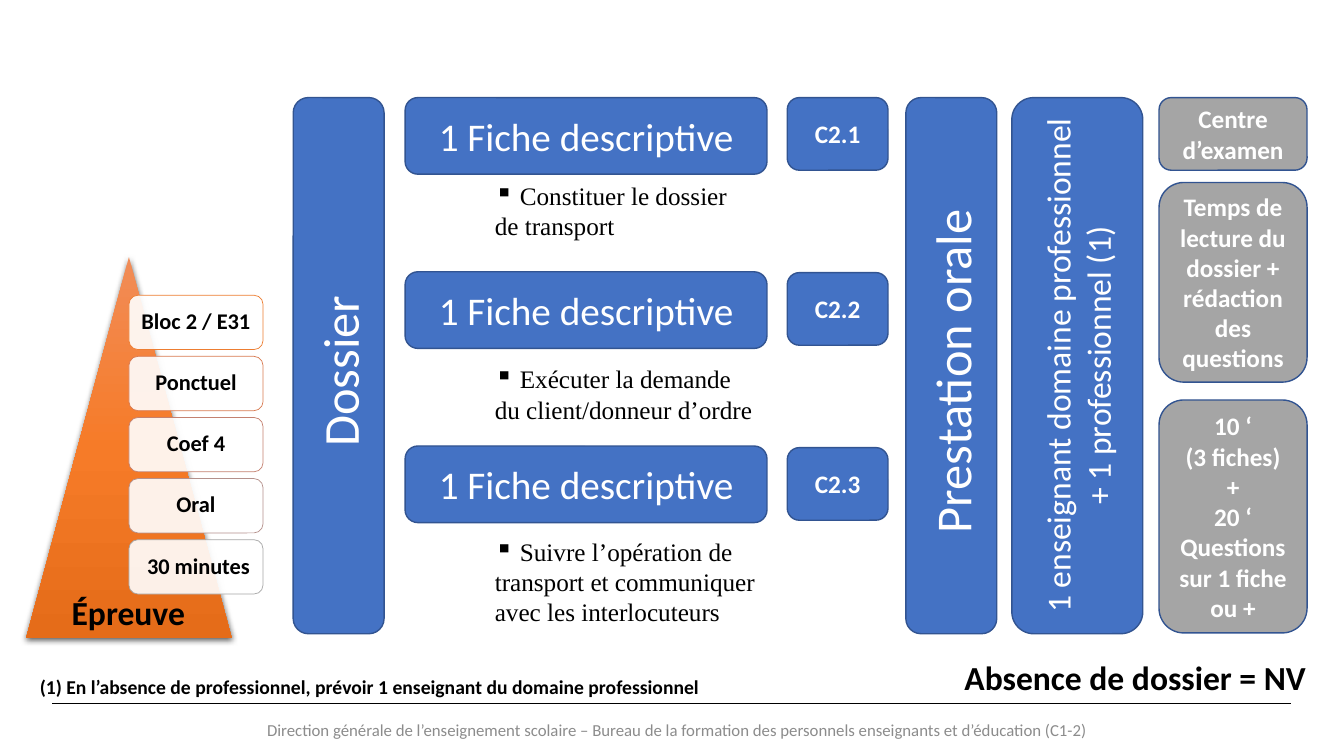
from dataclasses import dataclass

from lxml import etree
from pptx import Presentation
from pptx.dml.color import RGBColor
from pptx.enum.shapes import MSO_CONNECTOR, MSO_SHAPE
from pptx.enum.text import MSO_ANCHOR, MSO_AUTO_SIZE, PP_ALIGN
from pptx.oxml import parse_xml
from pptx.oxml.ns import qn
from pptx.shapes.autoshape import Shape
from pptx.shapes.shapetree import SlideShapes
from pptx.util import Cm, Pt

ROUNDED, TRIANGLE = MSO_SHAPE.ROUNDED_RECTANGLE, MSO_SHAPE.ISOSCELES_TRIANGLE
STRAIGHT = MSO_CONNECTOR.STRAIGHT
LEFT, CENTER = PP_ALIGN.LEFT, PP_ALIGN.CENTER
TOP, MIDDLE = MSO_ANCHOR.TOP, MSO_ANCHOR.MIDDLE
FIT_TEXT = MSO_AUTO_SIZE.SHAPE_TO_FIT_TEXT
DRAWING_NS = "http://schemas.openxmlformats.org/drawingml/2006/main"


@dataclass(frozen=True)
class Theme:
    sans: str = "Calibri"
    serif: str = "Times New Roman"
    blue: str = "4472C4"
    outline: str = "325491"
    grey: str = "A5A5A5"
    white: str = "FFFFFF"
    black: str = "000000"
    footer: str = "8C8C8C"
    gradient: tuple[str, ...] = ("F18C57", "F67B28", "E56C19")
    pillar_size: int = 36
    sheet_size: int = 28
    title_size: int = 24
    body_size: int = 18
    card_size: int = 16
    note_size: int = 14
    footer_size: int = 12


THEME = Theme()


@dataclass(frozen=True)
class Box:
    """Position and size in centimetres."""
    left: float
    top: float
    width: float
    height: float

    def lengths(self) -> tuple[Cm, Cm, Cm, Cm]:
        return Cm(self.left), Cm(self.top), Cm(self.width), Cm(self.height)


@dataclass(frozen=True)
class Panel:
    text: str
    box: Box
    size: int
    fill: str = THEME.blue
    bold: bool = False
    vertical: bool = False


@dataclass(frozen=True)
class Skill:
    code: str
    task: str
    task_top: float
    task_height: float


@dataclass(frozen=True)
class Card:
    text: str
    outline: str


PILLAR_TOP, PILLAR_HEIGHT = 2.46, 13.51
SHEET_PITCH, CODE_PITCH = 4.39, 4.41
CARD_TOP, CARD_PITCH = 7.44, 1.54
CONDITION_LEFT, CONDITION_WIDTH = 29.21, 3.73

PILLARS = [
    Panel("Dossier ", Box(7.39, PILLAR_TOP, 2.29, PILLAR_HEIGHT),
          THEME.pillar_size, vertical=True),
    Panel("Prestation orale ", Box(22.83, PILLAR_TOP, 2.29, PILLAR_HEIGHT),
          THEME.pillar_size, vertical=True),
    Panel("1 enseignant domaine professionnel + 1 professionnel (1)",
          Box(25.5, PILLAR_TOP, 3.3, PILLAR_HEIGHT), THEME.title_size, vertical=True),
]
CONDITIONS = [
    Panel(text, Box(CONDITION_LEFT, top, CONDITION_WIDTH, height),
          THEME.body_size, THEME.grey, bold=True)
    for text, top, height in (
        ("Centre d’examen", PILLAR_TOP, 1.83),
        ("Temps de lecture du dossier + rédaction des questions", 4.6, 5.03),
        ("10 ‘\v (3 fiches) \n+\n20 ‘\nQuestions sur 1 fiche ou +", 10.08, 5.87),
    )
]
SKILLS = [
    Skill("C2.1", " Constituer le dossier de transport", 4.42, 1.8),
    Skill("C2.2", " Exécuter la demande du client/donneur d’ordre", 9.04, 1.8),
    Skill("C2.3", " Suivre l’opération de transport et communiquer avec les interlocuteurs",
          13.39, 2.57),
]
CARDS = [
    Card("Bloc 2 / E31", "ED7D31"),
    Card("Ponctuel", "D87A51"),
    Card("Coef 4", "C48170"),
    Card("Oral", "B4908B"),
    Card(" 30 minutes", "A5A5A5"),
]


def write_text(shape: Shape, text: str, *, size: int, color: str = THEME.black,
               font: str = THEME.sans, bold: bool = False, align: PP_ALIGN = CENTER,
               anchor: MSO_ANCHOR = MIDDLE, bullet: str = "", spacing: float = 1.0,
               vertical: bool = False) -> None:
    frame = shape.text_frame
    frame.word_wrap = True
    frame.vertical_anchor = anchor
    if vertical:
        frame._txBody.bodyPr.set("vert", "vert270")
    for index, line in enumerate(text.split("\n")):
        paragraph = frame.add_paragraph() if index else frame.paragraphs[0]
        paragraph.text = line
        paragraph.alignment = align
        paragraph.line_spacing = spacing
        if bullet:
            properties = paragraph._p.get_or_add_pPr()
            etree.SubElement(properties, qn("a:buChar")).set("char", bullet)
        for run in paragraph.runs:
            run.font.name = font
            run.font.size = Pt(size)
            run.font.bold = bold
            run.font.color.rgb = RGBColor.from_string(color)


def add_label(shapes: SlideShapes, box: Box, text: str, *, anchor: MSO_ANCHOR = TOP,
              **text_format) -> None:
    label = shapes.add_textbox(*box.lengths())
    if anchor == TOP:
        label.text_frame.auto_size = FIT_TEXT
    write_text(label, text, anchor=anchor, **text_format)


def add_rounded(shapes: SlideShapes, box: Box, fill: str, outline: str,
                line_width: float) -> Shape:
    rounded = shapes.add_shape(ROUNDED, *box.lengths())
    rounded.shadow.inherit = False
    rounded.fill.solid()
    rounded.fill.fore_color.rgb = RGBColor.from_string(fill)
    rounded.line.color.rgb = RGBColor.from_string(outline)
    rounded.line.width = Pt(line_width)
    return rounded


def add_panel(shapes: SlideShapes, panel: Panel) -> None:
    rounded = add_rounded(shapes, panel.box, panel.fill, THEME.outline, 1)
    write_text(rounded, panel.text, size=panel.size, color=THEME.white,
               bold=panel.bold, vertical=panel.vertical)


def add_card(shapes: SlideShapes, card: Card, top: float) -> None:
    rounded = add_rounded(shapes, Box(3.25, top, 3.38, 1.37), THEME.white, card.outline, 0.5)
    fill_color = rounded._element.spPr.find(qn("a:solidFill"))[0]
    etree.SubElement(fill_color, qn("a:alpha")).set("val", "90000")
    write_text(rounded, card.text, size=THEME.card_size, bold=True, spacing=0.9)


def add_pyramid(shapes: SlideShapes, box: Box) -> None:
    pyramid = shapes.add_shape(TRIANGLE, *box.lengths())
    pyramid.shadow.inherit = False
    pyramid.line.fill.background()
    pyramid.fill.background()
    stops = "".join(f'<a:gs pos="{index * 50000}"><a:srgbClr val="{color}"/></a:gs>'
                    for index, color in enumerate(THEME.gradient))
    properties = pyramid._element.spPr
    properties.replace(properties.find(qn("a:noFill")), parse_xml(
        f'<a:gradFill xmlns:a="{DRAWING_NS}"><a:gsLst>{stops}</a:gsLst>'
        '<a:lin ang="5400000" scaled="0"/></a:gradFill>'))
    properties.find(qn("a:effectLst")).append(parse_xml(
        f'<a:outerShdw xmlns:a="{DRAWING_NS}" blurRad="57150" dist="19050" dir="5400000">'
        f'<a:srgbClr val="{THEME.black}"><a:alpha val="63000"/></a:srgbClr></a:outerShdw>'))


def add_footer(shapes: SlideShapes) -> None:
    rule = shapes.add_connector(STRAIGHT, Cm(1.32), Cm(17.73), Cm(32.54), Cm(17.73))
    rule.line.color.rgb = RGBColor.from_string(THEME.black)
    rule.line.width = Pt(0.8)
    etree.SubElement(rule._element.spPr, qn("a:effectLst"))
    add_label(shapes, Box(1.32, 17.73, 31.6, 1.32),
              "Direction générale de l’enseignement scolaire – Bureau de la formation "
              "des personnels enseignants et d’éducation (C1-2) ",
              size=THEME.footer_size, color=THEME.footer, anchor=MIDDLE)


def main() -> None:
    deck = Presentation()
    deck.slide_width, deck.slide_height = Cm(33.87), Cm(19.05)
    shapes = deck.slides.add_slide(deck.slide_layouts[6]).shapes

    add_footer(shapes)

    # Vertical pillars and exam conditions
    for panel in PILLARS + CONDITIONS:
        add_panel(shapes, panel)

    # One descriptive sheet per skill
    for row, skill in enumerate(SKILLS):
        add_panel(shapes, Panel("1 Fiche descriptive",
                                Box(10.21, PILLAR_TOP + row * SHEET_PITCH, 9.12, 1.93),
                                THEME.sheet_size))
        add_panel(shapes, Panel(skill.code,
                                Box(19.84, PILLAR_TOP + row * CODE_PITCH, 2.54, 1.83),
                                THEME.body_size, bold=True))
        add_label(shapes, Box(12.22, skill.task_top, 7.11, skill.task_height), skill.task,
                  size=THEME.body_size, font=THEME.serif, align=LEFT, bullet="▪")

    # Exam pyramid with its cards
    add_pyramid(shapes, Box(0.66, 6.48, 5.18, 9.6))
    for row, card in enumerate(CARDS):
        add_card(shapes, card, CARD_TOP + row * CARD_PITCH)
    add_label(shapes, Box(0.86, 14.78, 4.75, 1.27), "Épreuve",
              size=THEME.title_size, bold=True)

    # Closing notes
    add_label(shapes, Box(23.72, 16.43, 9.78, 1.27), "Absence de dossier = NV",
              size=THEME.title_size, bold=True)
    add_label(shapes, Box(0.25, 16.87, 18.14, 0.86),
              "(1) En l’absence de professionnel, prévoir 1 enseignant du domaine professionnel",
              size=THEME.note_size, bold=True)

    deck.save("out.pptx")


if __name__ == "__main__":
    main()
